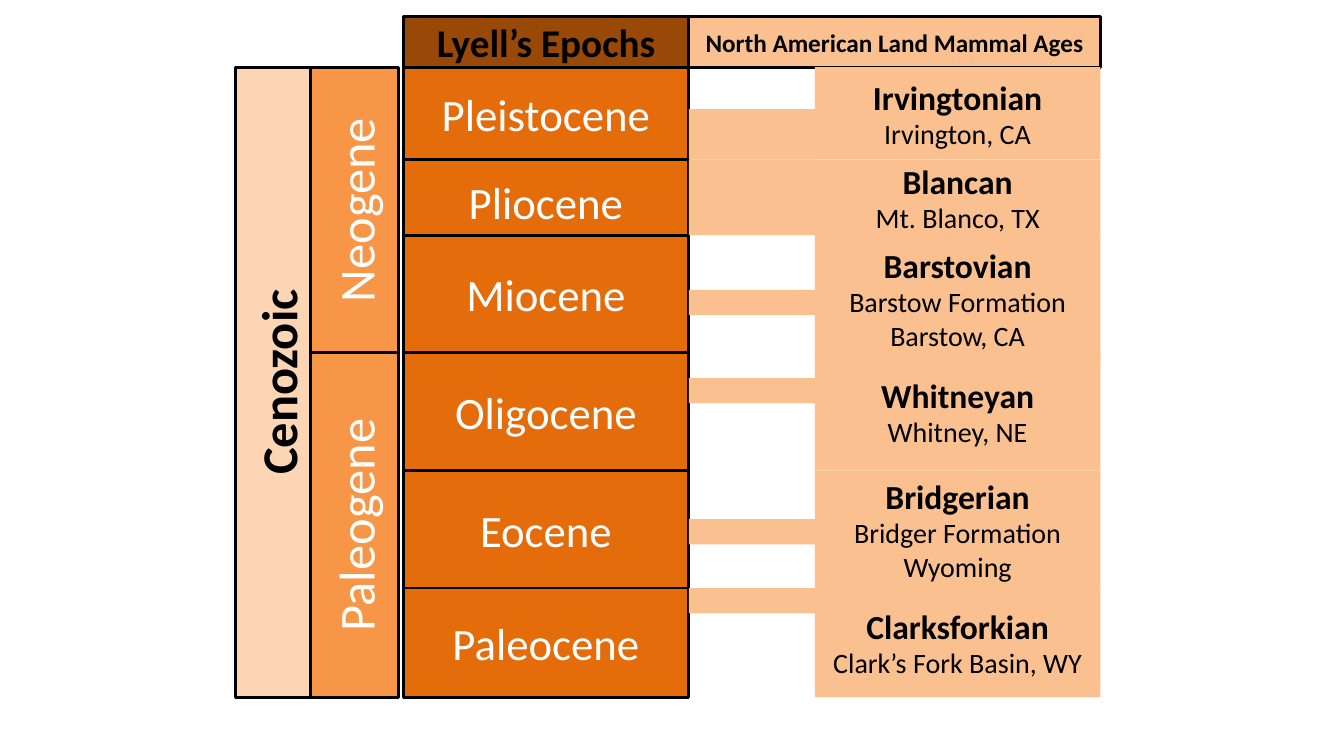
import pptx
import pptx.util
import pptx.dml.color
import pptx.enum.shapes
import pptx.enum.text

COLUMNS, ROWS = 160, 90
BLACK, WHITE = "000000", "FFFFFF"
ERA, PERIOD, EPOCH, EPOCH_HEADER, AGE = "FCD5B5", "F79646", "E46C0A", "984807", "FAC090"
EPOCH_LEFT, EPOCH_WIDTH = 48, 34
LINK_LEFT, AGE_LEFT, AGE_RIGHT = 82, 97, 131
HEADER_TOP, CHART_TOP, CHART_BOTTOM = 2, 8, 83


def color(value):
    return pptx.dml.color.RGBColor.from_string(value)


class TimeChart:
    font = "Calibri"
    border = 2

    def __init__(self, presentation):
        self.slide = presentation.slides.add_slide(presentation.slide_layouts[6])
        self.column = presentation.slide_width / COLUMNS
        self.row = presentation.slide_height / ROWS

    def block(self, left, top, width, height, fill, lines=(), bordered=True, rotation=0):
        shape = self.slide.shapes.add_shape(
            pptx.enum.shapes.MSO_SHAPE.RECTANGLE,
            round(left * self.column), round(top * self.row),
            round(width * self.column), round(height * self.row))
        shape.rotation = rotation
        shape.shadow.inherit = False
        shape.fill.solid()
        shape.fill.fore_color.rgb = color(fill)
        if bordered:
            shape.line.color.rgb = color(BLACK)
            shape.line.width = pptx.util.Pt(self.border)
        else:
            shape.line.fill.background()
        self.label(shape.text_frame, lines)
        return shape

    def label(self, frame, lines):
        frame.word_wrap = True
        frame.vertical_anchor = pptx.enum.text.MSO_ANCHOR.MIDDLE
        for index, (text, size, ink, bold) in enumerate(lines):
            paragraph = frame.add_paragraph() if index else frame.paragraphs[0]
            paragraph.alignment = pptx.enum.text.PP_ALIGN.CENTER
            run = paragraph.add_run()
            run.text = text
            run.font.name = self.font
            run.font.size = pptx.util.Pt(size)
            run.font.bold = bold
            run.font.color.rgb = color(ink)

    def upright(self, left, top, width, bottom, fill, line):
        length = bottom - top
        self.block(left + (width - length) / 2, top + (length - width) / 2,
                   length, width, fill, [line], rotation=270)

    def age(self, name, places, top, bottom, link_top, link_height):
        lines = [(name, 24, BLACK, True)]
        lines += [(place, 20, BLACK, False) for place in places]
        full_width = link_height == bottom - top
        left = LINK_LEFT if full_width else AGE_LEFT
        cell = self.block(left, top, AGE_RIGHT - left, bottom - top, AGE, lines, bordered=False)
        if full_width:
            cell.text_frame.margin_left += round((AGE_LEFT - LINK_LEFT) * self.column)
        else:
            self.block(LINK_LEFT, link_top, AGE_LEFT - LINK_LEFT, link_height, AGE, bordered=False)


def main():
    presentation = pptx.Presentation()
    presentation.slide_width = pptx.util.Inches(COLUMNS / 12)
    presentation.slide_height = pptx.util.Inches(ROWS / 12)
    chart = TimeChart(presentation)

    chart.upright(28, CHART_TOP, 10, CHART_BOTTOM, ERA, ("Cenozoic", 36, BLACK, True))

    epochs = [("Pleistocene", 8, 19), ("Pliocene", 19, 29), ("Miocene", 28, 42),
              ("Oligocene", 42, 56), ("Eocene", 56, 70), ("Paleocene", 70, CHART_BOTTOM)]
    for epoch, top, bottom in epochs:
        chart.block(EPOCH_LEFT, top, EPOCH_WIDTH, bottom - top, EPOCH,
                    [(epoch, 32, WHITE, False)])

    for period, top, bottom in [("Paleogene", 42, CHART_BOTTOM), ("Neogene", CHART_TOP, 42)]:
        chart.upright(37, top, 10.4, bottom, PERIOD, (period, 36, WHITE, False))

    headers = [("Lyell’s Epochs", EPOCH_LEFT, LINK_LEFT, EPOCH_HEADER, 28),
               ("North American Land Mammal Ages", LINK_LEFT, AGE_RIGHT, AGE, 18)]
    for header, left, right, fill, size in headers:
        chart.block(left, HEADER_TOP, right - left, CHART_TOP - HEADER_TOP, fill,
                    [(header, size, BLACK, True)])

    ages = [("Irvingtonian", ["Irvington, CA"], 8, 19, 13, 6),
            ("Blancan", ["Mt. Blanco, TX"], 19, 28, 19, 9),
            ("Barstovian", ["Barstow Formation", "Barstow, CA"], 28, 43, 34.5, 3),
            ("Whitneyan", ["Whitney, NE"], 42, 56, 45, 3),
            ("Bridgerian", ["Bridger Formation", "Wyoming"], 56, 70, 61.8, 3),
            ("Clarksforkian", ["Clark’s Fork Basin, WY"], 70, CHART_BOTTOM, 70, 3)]
    for age in ages:
        chart.age(*age)

    presentation.save("out.pptx")


if __name__ == "__main__":
    main()
